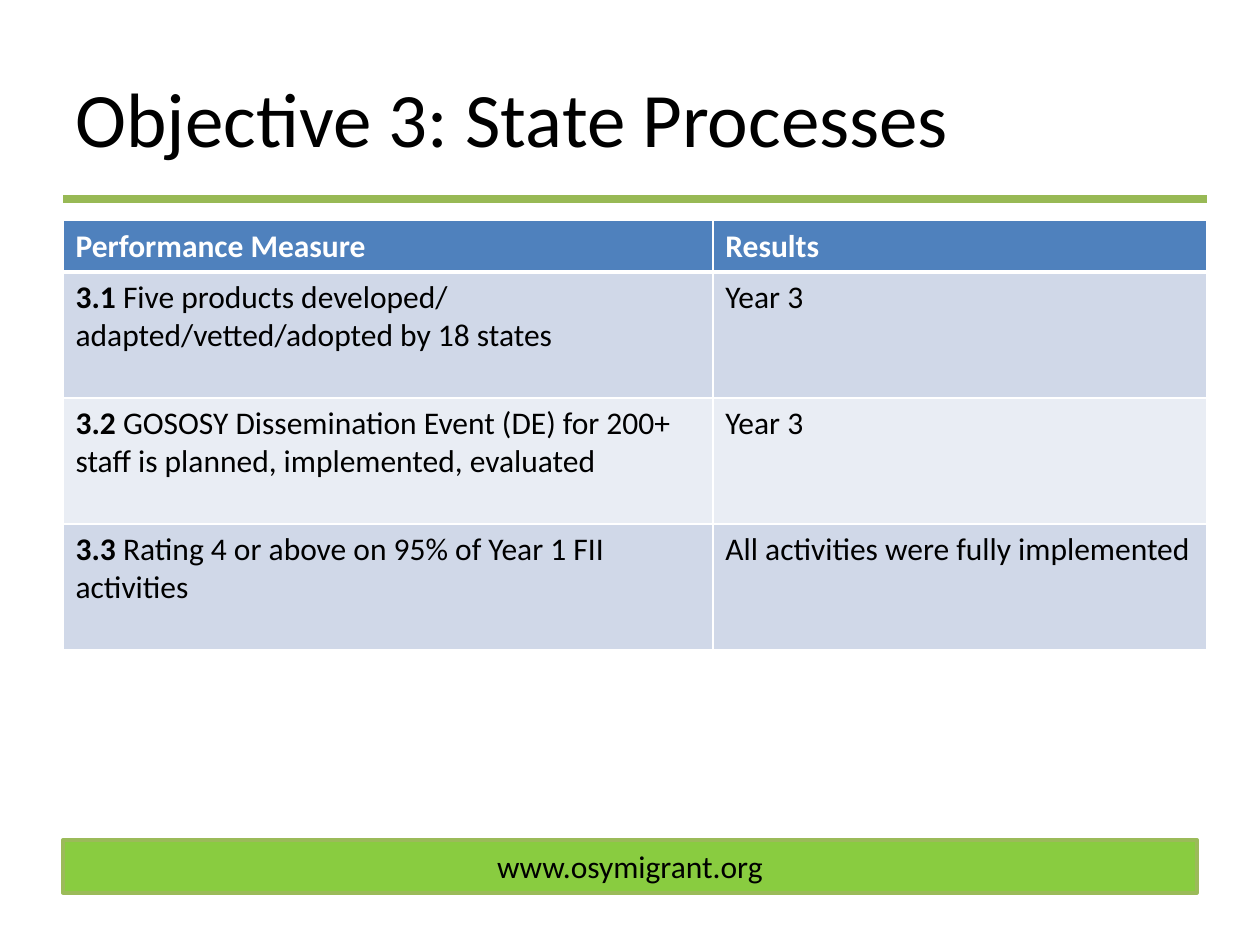
import pptx
import pptx.dml.color
import pptx.enum.shapes
import pptx.enum.text
import pptx.oxml.ns
import pptx.util
from lxml import etree
from pptx.util import Cm

FONT = "Calibri"
COLOURS = {
    "text": "000000",
    "white": "FFFFFF",
    "header": "4F81BD",
    "band_dark": "D0D8E8",
    "band_light": "E9EDF4",
    "rule": "98B955",
    "footer": "89CC40",
    "footer_edge": "9BBB59",
}
# Each cell is a list of (text, bold) spans
ROWS = [
    [[("Performance Measure", True)], [("Results", True)]],
    [[("3.1", True), (" Five products developed/ adapted/vetted/adopted by 18 states", False)],
     [("Year 3", False)]],
    [[("3.2", True), (" GOSOSY Dissemination Event (DE) for 200+ staff is planned, "
                      "implemented, evaluated", False)],
     [("Year 3", False)]],
    [[("3.3 ", True), ("Rating 4 or above on 95% of Year 1 FII activities", False)],
     [("All activities were fully implemented", False)]],
]


def colour(name):
    return pptx.dml.color.RGBColor.from_string(COLOURS[name])


def add_span(para, text, size, shade="text", bold=False):
    span = para.add_run()
    span.text = text
    span.font.name = FONT
    span.font.size = pptx.util.Pt(size)
    span.font.bold = bold
    span.font.color.rgb = colour(shade)


def set_border(cell, side, width):
    properties = cell._tc.get_or_add_tcPr()
    tag = pptx.oxml.ns.qn
    line = etree.SubElement(properties, tag("a:ln" + side), w=str(pptx.util.Pt(width)))
    fill = etree.SubElement(line, tag("a:solidFill"))
    etree.SubElement(fill, tag("a:srgbClr"), val=COLOURS["white"])


def place_title(page, left, top, width, height):
    box = page.shapes.title
    box.left, box.top, box.width, box.height = left, top, width, height
    frame = box.text_frame
    frame.word_wrap = True
    frame.vertical_anchor = pptx.enum.text.MSO_ANCHOR.MIDDLE
    para = frame.paragraphs[0]
    para.alignment = pptx.enum.text.PP_ALIGN.LEFT
    add_span(para, "Objective 3: State Processes", 44)


def add_rule(page, left, top, width):
    rule = page.shapes.add_connector(
        pptx.enum.shapes.MSO_CONNECTOR.STRAIGHT, left, top, left + width, top)
    rule.line.color.rgb = colour("rule")
    rule.line.width = pptx.util.Pt(4.5)
    etree.SubElement(rule._element.spPr, pptx.oxml.ns.qn("a:effectLst"))


def add_measures(page, left, top, width, height):
    table = page.shapes.add_table(len(ROWS), 2, left, top, width, height).table
    table.columns[0].width = Cm(13.1)
    table.columns[1].width = width - Cm(13.1)
    header_height = Cm(1.03)
    body_height = (height - header_height) // (len(ROWS) - 1)
    for r, row in enumerate(ROWS):
        table.rows[r].height = body_height if r else header_height
        band = "header" if r == 0 else "band_dark" if r % 2 else "band_light"
        for c, spans in enumerate(row):
            cell = table.cell(r, c)
            # A thick border parts the header from the body
            widths = {"L": 1, "R": 1, "T": 3 if r == 1 else 1, "B": 3 if r == 0 else 1}
            for side, line_width in widths.items():
                set_border(cell, side, line_width)
            cell.fill.solid()
            cell.fill.fore_color.rgb = colour(band)
            for text, bold in spans:
                add_span(cell.text_frame.paragraphs[0], text, 18,
                         "text" if r else "white", bold)


def add_footer(page, left, top, width, height):
    bar = page.shapes.add_shape(
        pptx.enum.shapes.MSO_SHAPE.RECTANGLE, left, top, width, height)
    bar.shadow.inherit = False
    bar.fill.solid()
    bar.fill.fore_color.rgb = colour("footer")
    bar.line.color.rgb = colour("footer_edge")
    bar.line.width = pptx.util.Pt(2)
    bar.text_frame.word_wrap = True
    para = bar.text_frame.paragraphs[0]
    para.alignment = pptx.enum.text.PP_ALIGN.CENTER
    add_span(para, "www.osymigrant.org", 18)


def main():
    deck = pptx.Presentation()
    deck.slide_width, deck.slide_height = Cm(25.4), Cm(19.05)
    page = deck.slides.add_slide(deck.slide_layouts[5])
    margin, text_width, table_width = Cm(1.27), Cm(22.86), Cm(23.06)

    # Heading
    place_title(page, margin, Cm(0.76), text_width, Cm(3.18))
    add_rule(page, margin, Cm(4.01), table_width)
    # Performance measures
    add_measures(page, margin, Cm(4.45), table_width, Cm(8.65))
    # Web address
    add_footer(page, margin, Cm(16.93), text_width, Cm(1.07))

    deck.save("out.pptx")


if __name__ == "__main__":
    main()
